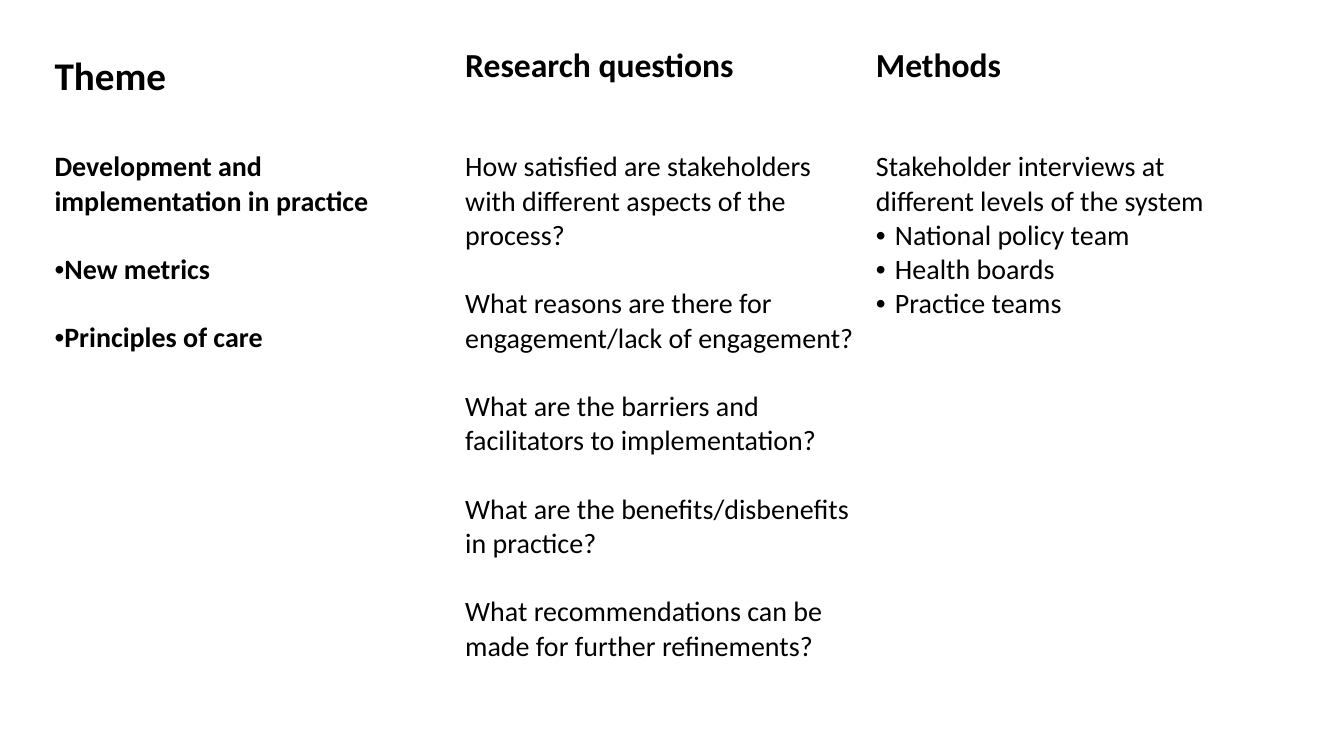
from lxml import etree
from pptx import Presentation
from pptx import util as u
from pptx.dml.color import RGBColor
from pptx.oxml.ns import qn

BLACK, WHITE = "000000", "FFFFFF"
COLUMN_WIDTH = 10.35
ROW_HEIGHTS = (2.79, 16.57)
BLANK_LINE = 24.4

# Heading, heading size, space above it in cm
HEADINGS = [
    ("Theme", 28, 1.33),
    ("Research questions", 24, 1.16),
    ("Methods", 24, 1.16),
]
BODY_TOP = 0.99

THEMES = ["Development and implementation in practice", "New metrics", "Principles of care"]
QUESTIONS = [
    "How satisfied are stakeholders with different aspects of the process?",
    "What reasons are there for engagement/lack of engagement?",
    "What are the barriers and facilitators to implementation?",
    "What are the benefits/disbenefits in practice?",
    "What recommendations can be made for further refinements?",
]
METHODS = [
    "Stakeholder interviews at different levels of the system",
    "National policy team",
    "Health boards",
    "Practice teams",
]


def color(hex_string):
    return RGBColor.from_string(hex_string)


def add_bullet(para, indent):
    properties = para._p.get_or_add_pPr()
    properties.set("marL", str(u.Cm(indent)))
    properties.set("indent", str(-u.Cm(indent)))
    etree.SubElement(properties, qn("a:buFont"), typeface="Arial")
    etree.SubElement(properties, qn("a:buChar"), char="•")


def style_cell(cell, top):
    """Give the cell a white fill, thin white borders and its top margin."""
    properties = cell._tc.get_or_add_tcPr()
    for side in ("lnL", "lnR", "lnT", "lnB"):
        line = etree.SubElement(properties, qn(f"a:{side}"), w=str(u.Pt(0.75)))
        fill = etree.SubElement(line, qn("a:solidFill"))
        etree.SubElement(fill, qn("a:srgbClr"), val=WHITE)
    cell.fill.solid()
    cell.fill.fore_color.rgb = color(WHITE)
    cell.margin_top = u.Cm(top)


def fill_cell(cell, lines, size, top, bold=False, gap=0, bullet_indent=None):
    """Write one paragraph per line; with a bullet indent, all but the first get bullets."""
    style_cell(cell, top)
    frame = cell.text_frame
    for number, line in enumerate(lines):
        para = frame.add_paragraph() if number else frame.paragraphs[0]
        para.text = line
        if number:
            para.space_before = u.Pt(gap)
            if bullet_indent is not None:
                add_bullet(para, bullet_indent)
        para.font.name = "Calibri"
        para.font.size = u.Pt(size)
        para.font.bold = bold
        para.font.color.rgb = color(BLACK)


def add_research_table(page, left, top):
    count = len(HEADINGS)
    table = page.shapes.add_table(
        len(ROW_HEIGHTS), count, u.Cm(left), u.Cm(top),
        u.Cm(COLUMN_WIDTH * count), u.Cm(sum(ROW_HEIGHTS))).table
    table.first_row = table.horz_banding = False
    for column in table.columns:
        column.width = u.Cm(COLUMN_WIDTH)
    for row, height in zip(table.rows, ROW_HEIGHTS):
        row.height = u.Cm(height)

    for index, (heading, size, space) in enumerate(HEADINGS):
        fill_cell(table.cell(0, index), [heading], size, space, bold=True)
    themes, questions, methods = table.rows[1].cells
    fill_cell(themes, THEMES, 20, BODY_TOP, bold=True, gap=BLANK_LINE, bullet_indent=0)
    fill_cell(questions, QUESTIONS, 20, BODY_TOP, gap=BLANK_LINE)
    fill_cell(methods, METHODS, 20, BODY_TOP, bullet_indent=0.48)


def main():
    deck = Presentation()
    deck.slide_width, deck.slide_height = u.Cm(33.87), u.Cm(19.05)
    page = deck.slides.add_slide(deck.slide_layouts[6])
    add_research_table(page, 1.12, 0)
    deck.save("out.pptx")


if __name__ == "__main__":
    main()
